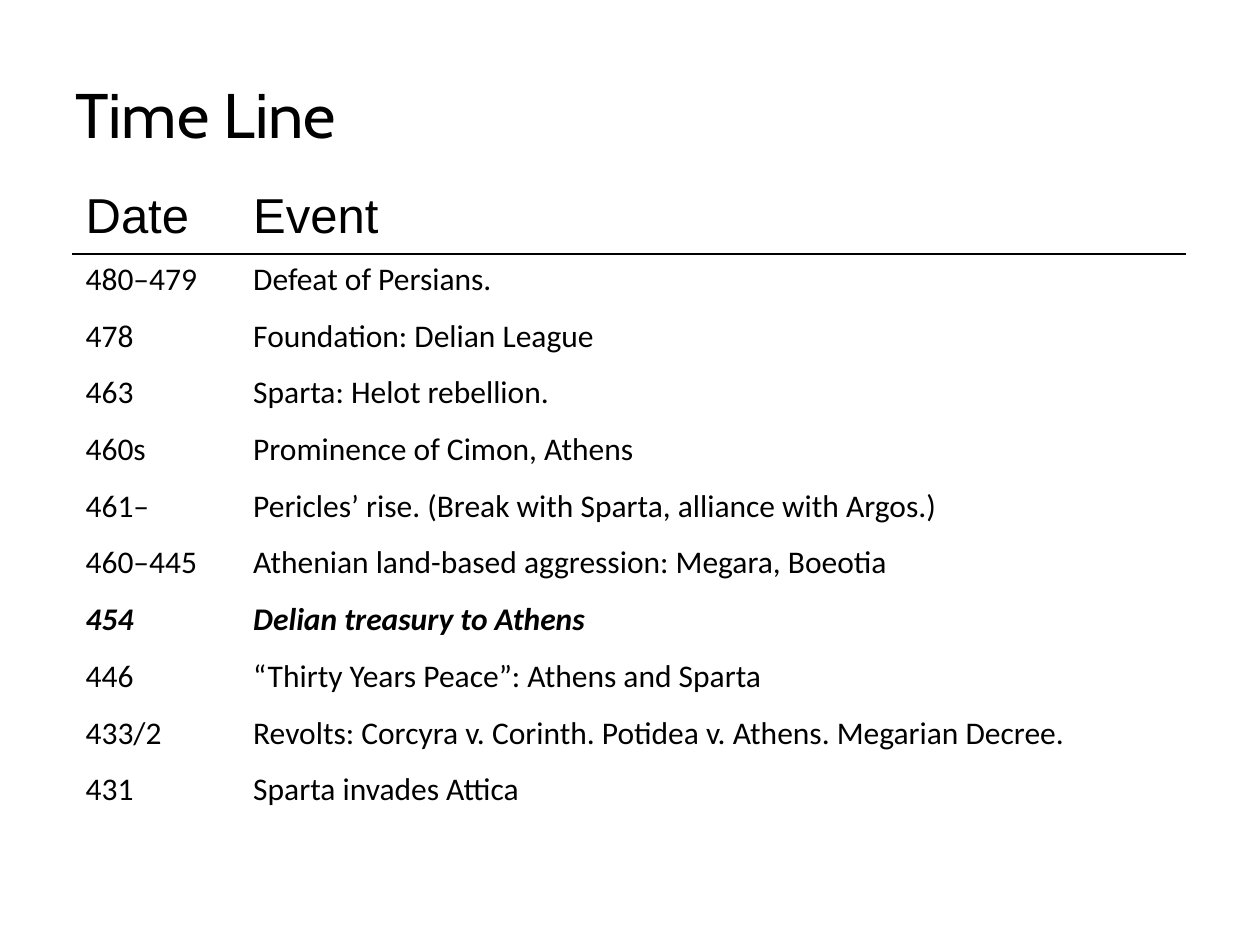
from pptx import Presentation
from pptx.dml.color import RGBColor
from pptx.enum.text import MSO_ANCHOR
from pptx.oxml import parse_xml
from pptx.oxml.ns import nsdecls
from pptx.util import Inches, Pt

TITLE = "Time Line"
HEAD = ("Date", "Event")
EVENTS = [
    ("480–479", "Defeat of Persians."),
    ("478", "Foundation: Delian League"),
    ("463", "Sparta: Helot rebellion."),
    ("460s", "Prominence of Cimon, Athens"),
    ("461–", "Pericles’ rise. (Break with Sparta, alliance with Argos.)"),
    ("460–445", "Athenian land-based aggression: Megara, Boeotia"),
    ("454", "Delian treasury to Athens"),
    ("446", "“Thirty Years Peace”: Athens and Sparta"),
    ("433/2", "Revolts: Corcyra v. Corinth. Potidea v. Athens. Megarian Decree."),
    ("431", "Sparta invades Attica"),
]
KEY = "454"
THEME = {
    "ink": "000000",
    "title": ("Cabin", 36),
    "head": ("Arial", 28),
    "body": ("Calibri", 18),
}
WIDTHS = (1.33, 7.5)
HEAD_H, ROW_H = 0.51, 0.45


def style(para, role, strong=False):
    font = para.font
    font.name, size = THEME[role]
    font.size = Pt(size)
    font.bold = font.italic = strong
    font.color.rgb = RGBColor.from_string(THEME["ink"])


def rule(cell, side):
    cell._tc.get_or_add_tcPr().insert(0, parse_xml(
        f'<a:{side} {nsdecls("a")} w="{Pt(1)}"><a:solidFill>'
        f'<a:srgbClr val="{THEME["ink"]}"/></a:solidFill></a:{side}>'))


def add_title(slide):
    box = slide.shapes.add_textbox(
        Inches(0.5), Inches(0.08), Inches(7.42), Inches(1.17))
    frame = box.text_frame
    frame.word_wrap = True
    frame.vertical_anchor = MSO_ANCHOR.BOTTOM
    frame.text = TITLE
    style(frame.paragraphs[0], "title")


def add_dates(slide):
    rows = [HEAD, *EVENTS]
    high = HEAD_H + ROW_H * len(EVENTS)
    table = slide.shapes.add_table(
        len(rows), len(HEAD), Inches(0.58), Inches(1.45),
        Inches(sum(WIDTHS)), Inches(high)).table
    table.first_row = table.horz_banding = False
    for col, width in zip(table.columns, WIDTHS):
        col.width = Inches(width)
    for i, row in enumerate(rows):
        table.rows[i].height = Inches(ROW_H if i else HEAD_H)
        for j, text in enumerate(row):
            cell = table.cell(i, j)
            cell.text = text
            cell.fill.background()
            style(cell.text_frame.paragraphs[0],
                  "body" if i else "head", row[0] == KEY)
            if i < 2:
                rule(cell, "lnT" if i else "lnB")


def main():
    deck = Presentation()
    deck.slide_width, deck.slide_height = Inches(10), Inches(7.5)
    slide = deck.slides.add_slide(deck.slide_layouts[6])
    add_title(slide)
    add_dates(slide)
    deck.save("out.pptx")


if __name__ == "__main__":
    main()
